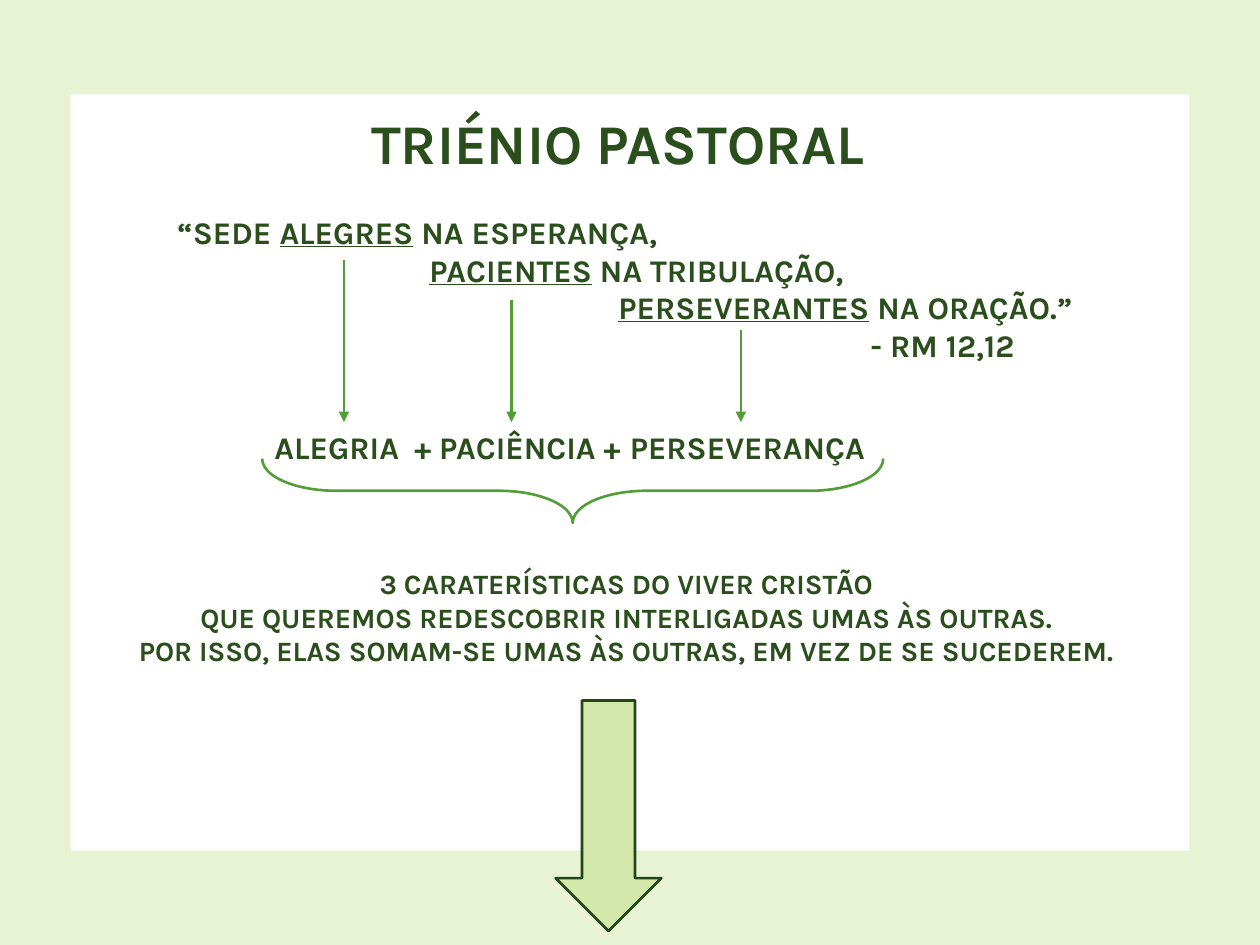
from lxml import etree
from pptx import Presentation
from pptx.dml.color import RGBColor
from pptx.enum.shapes import MSO_CONNECTOR, MSO_SHAPE
from pptx.enum.text import MSO_ANCHOR, PP_ALIGN
from pptx.oxml.ns import qn
from pptx.util import Inches, Pt

RECT, BRACE, DOWN = MSO_SHAPE.RECTANGLE, MSO_SHAPE.RIGHT_BRACE, MSO_SHAPE.DOWN_ARROW
STRAIGHT = MSO_CONNECTOR.STRAIGHT
BOTTOM, LEFT, CENTER = MSO_ANCHOR.BOTTOM, PP_ALIGN.LEFT, PP_ALIGN.CENTER

COLORS = {"border": "E8F3D4", "panel": "FFFFFF", "text": "2A4F1C",
          "line": "549E39", "arrow": "D2E7A9", "arrow_line": "254519"}
FONT = "Karla"
COLS, ROWS = 100, 75  # square grid, ten cells to the inch


def cells(*values):
    return [Inches(v / 10) for v in values]


def rgb(name):
    return RGBColor.from_string(COLORS[name])


def format_run(r, size):
    r.font.name, r.font.size, r.font.bold = FONT, Pt(size), True
    r.font.color.rgb = rgb("text")


def set_line(line, color):
    line.color.rgb = rgb(color)
    line.width = Pt(1.5)


def add_shape(s, kind, box, fill=None, line=None):
    sp = s.shapes.add_shape(kind, *cells(*box))
    sp.shadow.inherit = False
    if fill:
        sp.fill.solid()
        sp.fill.fore_color.rgb = rgb(fill)
    else:
        sp.fill.background()
    if line:
        set_line(sp.line, line)
    else:
        sp.line.fill.background()
    return sp


def add_text(s, box, lines, size, align=LEFT):
    """Each line is an indent in cells and a list of (text, underlined)."""
    tf = s.shapes.add_textbox(*cells(*box)).text_frame
    tf.word_wrap = True
    for i, (indent, runs) in enumerate(lines):
        p = tf.paragraphs[0] if i == 0 else tf.add_paragraph()
        p.alignment = align
        if indent:
            p._p.get_or_add_pPr().set("marL", str(cells(indent)[0]))
        for text, underlined in runs:
            r = p.add_run()
            r.text = text
            format_run(r, size)
            r.font.underline = underlined


def add_arrow(s, x, top, bottom):
    c = s.shapes.add_connector(STRAIGHT, *cells(x, top, x, bottom))
    set_line(c.line, "line")
    etree.SubElement(c.line._get_or_add_ln(), qn("a:tailEnd"), type="triangle")
    etree.SubElement(c._element.spPr, qn("a:effectLst"))


def add_title(s, box):
    title = s.shapes.title
    title.left, title.top, title.width, title.height = cells(*box)
    tf = title.text_frame
    tf.text = "TRIÉNIO PASTORAL"
    tf.vertical_anchor = BOTTOM
    p = tf.paragraphs[0]
    p.alignment, p.line_spacing = CENTER, 0.9
    format_run(p.runs[0], 32)
    # Bring the title in front of the panel
    title._element.getparent().append(title._element)


def add_quote(s, box):
    add_text(s, box, [
        (0, [("“SEDE ", False), ("ALEGRES", True), (" NA ESPERANÇA,", False)]),
        (20, [("PACIENTES", True), (" NA TRIBULAÇÃO,", False)]),
        (35, [("PERSEVERANTES", True), (" NA ORAÇÃO.”", False)]),
        (55, [("- RM 12,12", False)]),
    ], 18)


def add_virtues(s, box):
    left, top, width, height = box
    # Word, its offset, then the offset and length of its arrow
    virtues = [("ALEGRIA", 0, 6.5, 12.9),
               ("+ PACIÊNCIA +", 11.1, 19.8, 9.7),
               ("PERSEVERANÇA", 28.2, 38, 7.3)]
    for word, offset, arrow, length in virtues:
        add_text(s, (left + offset, top, 50, 4), [(0, [(word, False)])], 18)
        add_arrow(s, left + arrow, top - length, top)
    # Brace under the words: an upright one turned about its centre
    depth = 5.1
    cx, cy = left + width / 2, top + height - depth / 2
    brace = add_shape(s, BRACE, (cx - depth / 2, cy - width / 2, depth, width),
                      line="line")
    brace.rotation = 90
    brace.adjustments[0] = 1.15


def add_conclusion(s, box):
    lines = ["3 CARATERÍSTICAS DO VIVER CRISTÃO ",
             "QUE QUEREMOS REDESCOBRIR INTERLIGADAS UMAS ÀS OUTRAS. ",
             "POR ISSO, ELAS SOMAM-SE UMAS ÀS OUTRAS, EM VEZ DE SE SUCEDEREM. "]
    add_text(s, box, [(0, [(text, False)]) for text in lines], 16, CENTER)


def main():
    prs = Presentation()
    prs.slide_width, prs.slide_height = cells(COLS, ROWS)
    s = prs.slides.add_slide(prs.slide_layouts[5])

    # Border and white panel
    add_shape(s, RECT, (0, 0, COLS, ROWS), "border")
    add_shape(s, RECT, (5.6, 7.5, COLS - 2 * 5.6, 60), "panel")

    add_title(s, (20.8, -1.9, 56.5, 16.4))
    add_quote(s, (13.1, 16.4, 73.2, 13.1))
    add_virtues(s, (20.8, 33.5, 49.3, 8))
    add_conclusion(s, (5.2, 44.5, COLS - 2 * 5.2, 9.4))

    # Arrow leading on to what follows
    add_shape(s, DOWN, (44.1, 55.6, 8.4, 18.3), "arrow", "arrow_line")
    prs.save("out.pptx")


if __name__ == "__main__":
    main()
